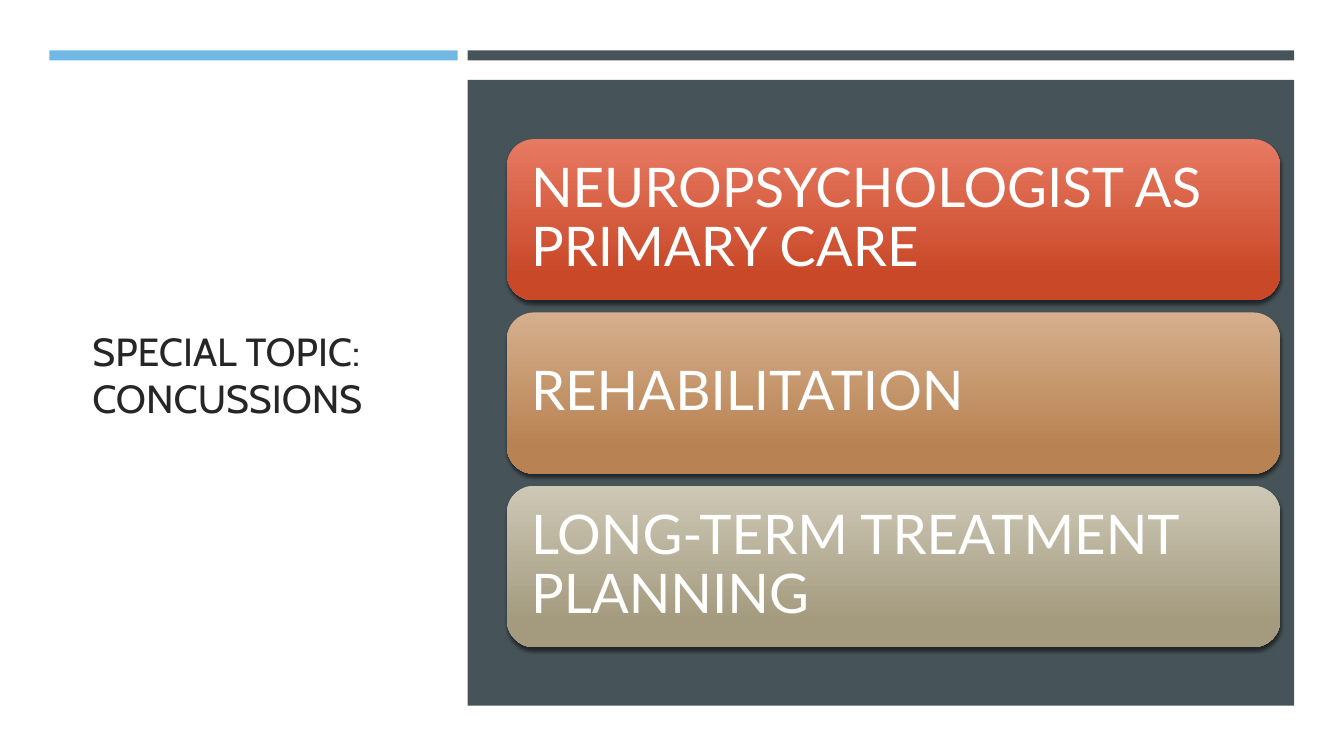
from lxml import etree
from pptx import Presentation
from pptx.dml.color import RGBColor
from pptx.enum.shapes import MSO_SHAPE
from pptx.enum.text import MSO_ANCHOR, PP_ALIGN
from pptx.oxml.ns import qn
from pptx.util import Pt

RECT = MSO_SHAPE.RECTANGLE
ROUND = MSO_SHAPE.ROUNDED_RECTANGLE
MIDDLE = MSO_ANCHOR.MIDDLE
LEFT = PP_ALIGN.LEFT

WHITE = RGBColor(0xFF, 0xFF, 0xFF)
INK = RGBColor(0x26, 0x26, 0x26)
SKY = RGBColor(0x71, 0xB9, 0xE4)
SLATE = RGBColor(0x46, 0x53, 0x59)
CORAL = RGBColor(0xE7, 0x7A, 0x62)
RUST = RGBColor(0xC9, 0x48, 0x28)
PEACH = RGBColor(0xD5, 0xAF, 0x8D)
TAN = RGBColor(0xB8, 0x82, 0x52)
SAND = RGBColor(0xCD, 0xC7, 0xB5)
KHAKI = RGBColor(0xA4, 0x9B, 0x7F)


class Deck:
    head_font = "Cabin"
    body_font = "Lato"

    def __init__(self, slide):
        self.slide = slide

    def shape(self, kind, left, top, width, height):
        shape = self.slide.shapes.add_shape(
            kind, Pt(left), Pt(top), Pt(width), Pt(height))
        shape.shadow.inherit = False
        shape.line.fill.background()
        return shape

    def block(self, left, top, width, height, color):
        shape = self.shape(RECT, left, top, width, height)
        shape.fill.solid()
        shape.fill.fore_color.rgb = color

    def label(self, shape, text, font, size, color):
        frame = shape.text_frame
        frame.word_wrap = True
        frame.vertical_anchor = MIDDLE
        frame.text = text
        para = frame.paragraphs[0]
        para.alignment = LEFT
        para.font.name = font
        para.font.size = Pt(size)
        para.font.color.rgb = color
        return frame

    def title(self, left, top, width, height, text):
        box = self.slide.shapes.add_textbox(
            Pt(left), Pt(top), Pt(width), Pt(height))
        self.label(box, text, self.head_font, 28, INK)

    def card(self, left, top, width, height, text, light, dark):
        shape = self.shape(ROUND, left, top, width, height)
        shape.fill.gradient()
        shape.fill.gradient_angle = 270
        for stop, spot, color in zip(
                shape.fill.gradient_stops, (0, 0.84), (light, dark)):
            stop.position = spot
            stop.color.rgb = color
        self.shade(shape)
        frame = self.label(shape, text, self.body_font, 39, WHITE)
        frame.paragraphs[0].line_spacing = 0.9
        frame.margin_left = frame.margin_right = Pt(11.5)
        frame.margin_top = frame.margin_bottom = Pt(11.5)

    def shade(self, shape):
        effects = shape.element.spPr.find(qn("a:effectLst"))
        outer = etree.SubElement(
            effects, qn("a:outerShdw"), blurRad=str(Pt(3)),
            dist=str(Pt(2)), dir="5400000", algn="ctr", rotWithShape="0")
        color = etree.SubElement(outer, qn("a:srgbClr"), val="000000")
        etree.SubElement(color, qn("a:alpha"), val="55000")


def main():
    prs = Presentation()
    prs.slide_width, prs.slide_height = Pt(960), Pt(540)
    deck = Deck(prs.slides.add_slide(prs.slide_layouts[6]))

    # Backdrop and title
    deck.block(0, 0, 960, 540, WHITE)
    deck.title(59, 82, 240.5, 371, "SPECIAL TOPIC: CONCUSSIONS")

    # Top bars and panel
    deck.block(35.3, 36, 291.6, 7.2, SKY)
    deck.block(334.1, 36, 590.4, 7.2, SLATE)
    deck.block(334.1, 57, 590.4, 447, SLATE)

    # Cards, evenly stacked
    cards = [
        ("NEUROPSYCHOLOGIST AS PRIMARY CARE", CORAL, RUST),
        ("REHABILITATION", PEACH, TAN),
        ("LONG-TERM TREATMENT PLANNING", SAND, KHAKI),
    ]
    for row, (text, light, dark) in enumerate(cards):
        deck.card(362.2, 99.4 + row * 123.8, 552.2, 115.2,
                  text, light, dark)

    prs.save("out.pptx")


if __name__ == "__main__":
    main()
